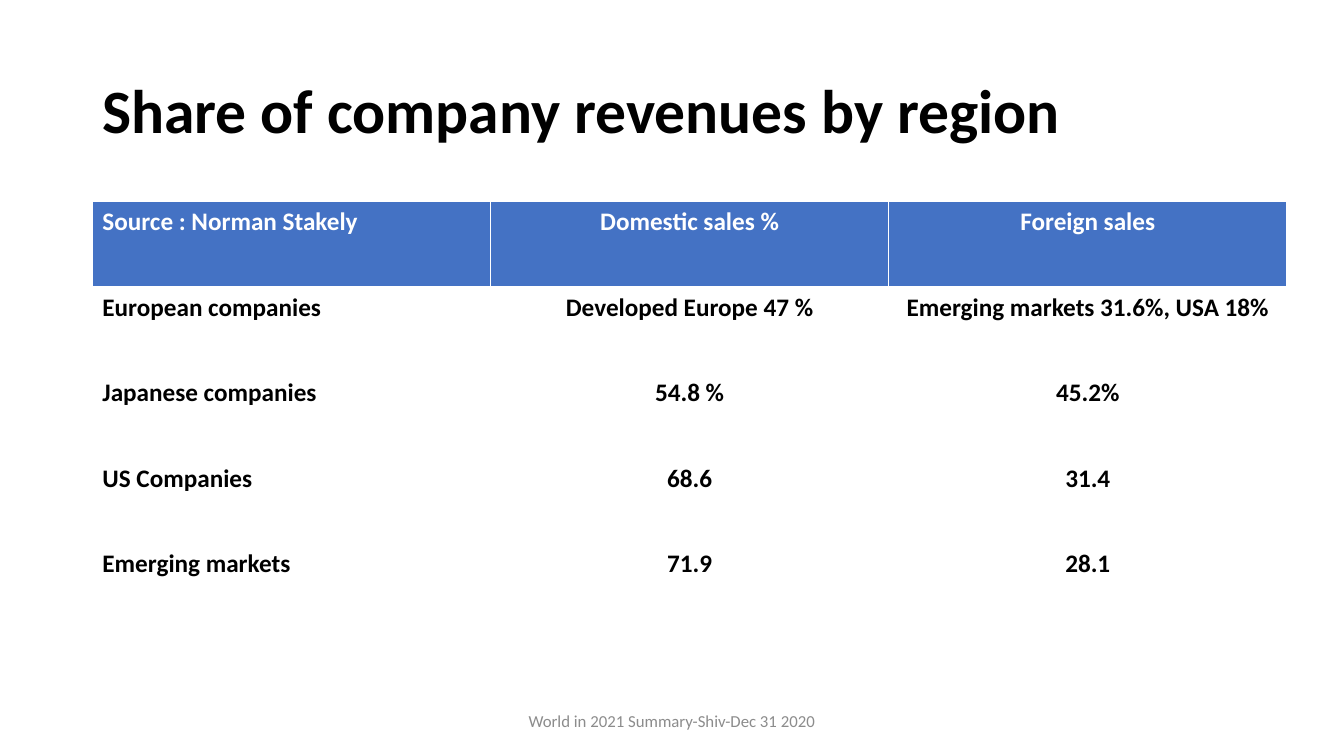
from dataclasses import dataclass

from pptx import Presentation
from pptx import util as u
from pptx.dml import color
from pptx.enum import text

GRID_COLS, GRID_ROWS = 160, 90


@dataclass(frozen=True)
class Theme:
    font: str = "Calibri"
    ink: str = "000000"
    paper: str = "FFFFFF"
    header: str = "4472C4"
    muted: str = "8C8C8C"
    title_size: int = 44
    table_size: int = 18
    footer_size: int = 12


class SlideBuilder:
    def __init__(self, prs, theme):
        self.theme = theme
        self.s = prs.slides.add_slide(prs.slide_layouts[6])
        self.col = prs.slide_width / GRID_COLS
        self.row = prs.slide_height / GRID_ROWS

    def box(self, x, y, w, h):
        return (u.Emu(round(x * self.col)), u.Emu(round(y * self.row)),
                u.Emu(round(w * self.col)), u.Emu(round(h * self.row)))

    def set_words(self, tf, words, size, ink, bold, centred):
        p = tf.paragraphs[0]
        p.text = words
        p.alignment = text.PP_ALIGN.CENTER if centred else text.PP_ALIGN.LEFT
        p.font.name = self.theme.font
        p.font.size = u.Pt(size)
        p.font.bold = bold
        p.font.color.rgb = color.RGBColor.from_string(ink)
        return p

    def label(self, words, x, y, w, h, size, ink, bold=False, centred=False):
        tf = self.s.shapes.add_textbox(*self.box(x, y, w, h)).text_frame
        tf.word_wrap = True
        tf.vertical_anchor = text.MSO_ANCHOR.MIDDLE
        return self.set_words(tf, words, size, ink, bold, centred)

    def table(self, rows, x, y, col_w, row_h):
        t = self.theme
        n_rows, n_cols = len(rows), len(rows[0])
        area = self.box(x, y, col_w * n_cols, row_h * n_rows)
        tbl = self.s.shapes.add_table(n_rows, n_cols, *area).table
        tbl.horz_banding = False
        for i, row in enumerate(rows):
            fill, ink = (t.paper, t.ink) if i else (t.header, t.paper)
            for j, words in enumerate(row):
                cell = tbl.cell(i, j)
                cell.fill.solid()
                cell.fill.fore_color.rgb = color.RGBColor.from_string(fill)
                self.set_words(cell.text_frame, words, t.table_size, ink, True, j > 0)


def main():
    prs = Presentation()
    prs.slide_width, prs.slide_height = u.Inches(40 / 3), u.Inches(7.5)
    theme = Theme()
    slide = SlideBuilder(prs, theme)

    title = slide.label("Share of company revenues by region", 11, 4.8, 138, 17.4,
                        theme.title_size, theme.ink, bold=True)
    title.line_spacing = 0.9

    slide.table([
        ("Source : Norman Stakely", "Domestic sales %", "Foreign sales"),
        ("European companies", "Developed Europe 47 %", "Emerging markets 31.6%, USA 18%"),
        ("Japanese companies", "54.8 %", "45.2%"),
        ("US Companies", "68.6", "31.4"),
        ("Emerging markets", "71.9", "28.1"),
    ], 11, 24, 47.4, 10.18)

    slide.label("World in 2021 Summary-Shiv-Dec 31 2020", 53, 83.4, 54, 4.8,
                theme.footer_size, theme.muted, centred=True)

    prs.save("out.pptx")


if __name__ == "__main__":
    main()
